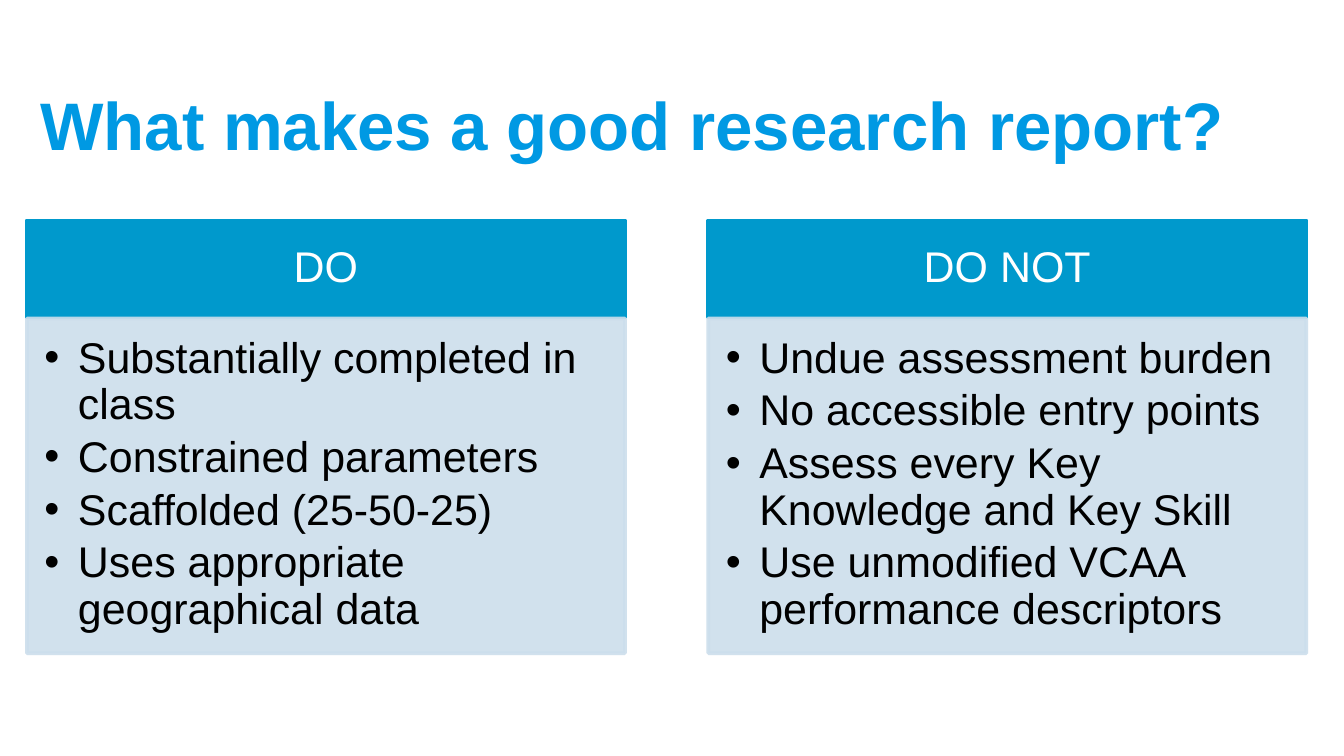
from lxml.etree import SubElement
from pptx import Presentation
from pptx.dml.color import RGBColor
from pptx.enum.text import MSO_ANCHOR, MSO_AUTO_SIZE, PP_ALIGN
from pptx.oxml.ns import qn
from pptx.util import Inches, Pt

TITLE = "What makes a good research report?"
COLUMNS = [
    ("DO", [
        "Substantially completed in class",
        "Constrained parameters",
        "Scaffolded (25-50-25)",
        "Uses appropriate geographical data",
    ]),
    ("DO NOT", [
        "Undue assessment burden",
        "No accessible entry points",
        "Assess every Key Knowledge and Key Skill",
        "Use unmodified VCAA performance descriptors",
    ]),
]

TITLE_BLUE = RGBColor(0x00, 0x99, 0xE3)
HEADER_BLUE = RGBColor(0x00, 0x99, 0xCC)
PALE_BLUE = RGBColor(0xCC, 0xDE, 0xEC)
WHITE = RGBColor(0xFF, 0xFF, 0xFF)
BLACK = RGBColor(0x00, 0x00, 0x00)

SLIDE_WIDTH = 10
LEFT, COLUMN_STEP, COLUMN_WIDTH = 0.2, 5.07, 4.45
HEADER_TOP, HEADER_HEIGHT = 1.64, 0.72
LIST_TOP, LIST_HEIGHT = 2.37, 2.49
TEXT_SIZE = 23


def place(shape, left, top, width, height):
    shape.left, shape.top = Inches(left), Inches(top)
    shape.width, shape.height = Inches(width), Inches(height)


def style_panel(shape, color, margins, anchor):
    shape.fill.solid()
    shape.fill.fore_color.rgb = color
    shape.line.color.rgb = color
    shape.line.width = Pt(2)
    frame = shape.text_frame
    frame.auto_size = MSO_AUTO_SIZE.NONE
    frame.word_wrap = True
    frame.vertical_anchor = anchor
    (frame.margin_left, frame.margin_top,
     frame.margin_right, frame.margin_bottom) = map(Inches, margins)


def set_opacity(shape, percent):
    for color in shape._element.spPr.iter(qn("a:srgbClr")):
        SubElement(color, qn("a:alpha"), val=str(percent * 1000))


def add_bullet(paragraph):
    properties = paragraph._p.get_or_add_pPr()
    properties.set("marL", str(Inches(0.25)))
    properties.set("indent", str(Inches(-0.25)))
    SubElement(properties, qn("a:buChar"), char="•")


def style_paragraph(paragraph, size, color, bold=False):
    for run in paragraph.runs:
        run.font.name = "Arial"
        run.font.size = Pt(size)
        run.font.bold = bold
        run.font.color.rgb = color


def space_paragraph(paragraph, after):
    paragraph.line_spacing = 0.9
    paragraph.space_before = Pt(0)
    paragraph.space_after = Pt(after)


presentation = Presentation()
presentation.slide_width = Inches(SLIDE_WIDTH)
presentation.slide_height = Inches(SLIDE_WIDTH * 9 / 16)
comparison_layout = presentation.slide_layouts.get_by_name("Comparison")
slide = presentation.slides.add_slide(comparison_layout)

title = slide.shapes.title
place(title, LEFT, 0.45, 9.53, 0.94)
title.text_frame.text = TITLE
title.text_frame.auto_size = MSO_AUTO_SIZE.NONE
title.text_frame.vertical_anchor = MSO_ANCHOR.MIDDLE
title.text_frame.paragraphs[0].alignment = PP_ALIGN.LEFT
style_paragraph(title.text_frame.paragraphs[0], 36, TITLE_BLUE, bold=True)

panels = [shape for shape in slide.placeholders
          if shape.placeholder_format.idx in (1, 2, 3, 4)]
for index, (heading, points) in enumerate(COLUMNS):
    left = LEFT + index * COLUMN_STEP
    header, body = panels[2 * index:2 * index + 2]

    place(header, left, HEADER_TOP, COLUMN_WIDTH, HEADER_HEIGHT)
    style_panel(header, HEADER_BLUE, (0.18, 0.1, 0.18, 0.1), MSO_ANCHOR.MIDDLE)
    header.text_frame.text = heading
    paragraph = header.text_frame.paragraphs[0]
    paragraph.alignment = PP_ALIGN.CENTER
    space_paragraph(paragraph, 0)
    style_paragraph(paragraph, TEXT_SIZE, WHITE)

    place(body, left, LIST_TOP, COLUMN_WIDTH, LIST_HEIGHT)
    style_panel(body, PALE_BLUE, (0.13, 0.13, 0.18, 0.2), MSO_ANCHOR.TOP)
    set_opacity(body, 90)
    body.text_frame.text = "\n".join(points)
    for paragraph in body.text_frame.paragraphs:
        add_bullet(paragraph)
        space_paragraph(paragraph, 0.15 * TEXT_SIZE)
        style_paragraph(paragraph, TEXT_SIZE, BLACK)

presentation.save("out.pptx")
